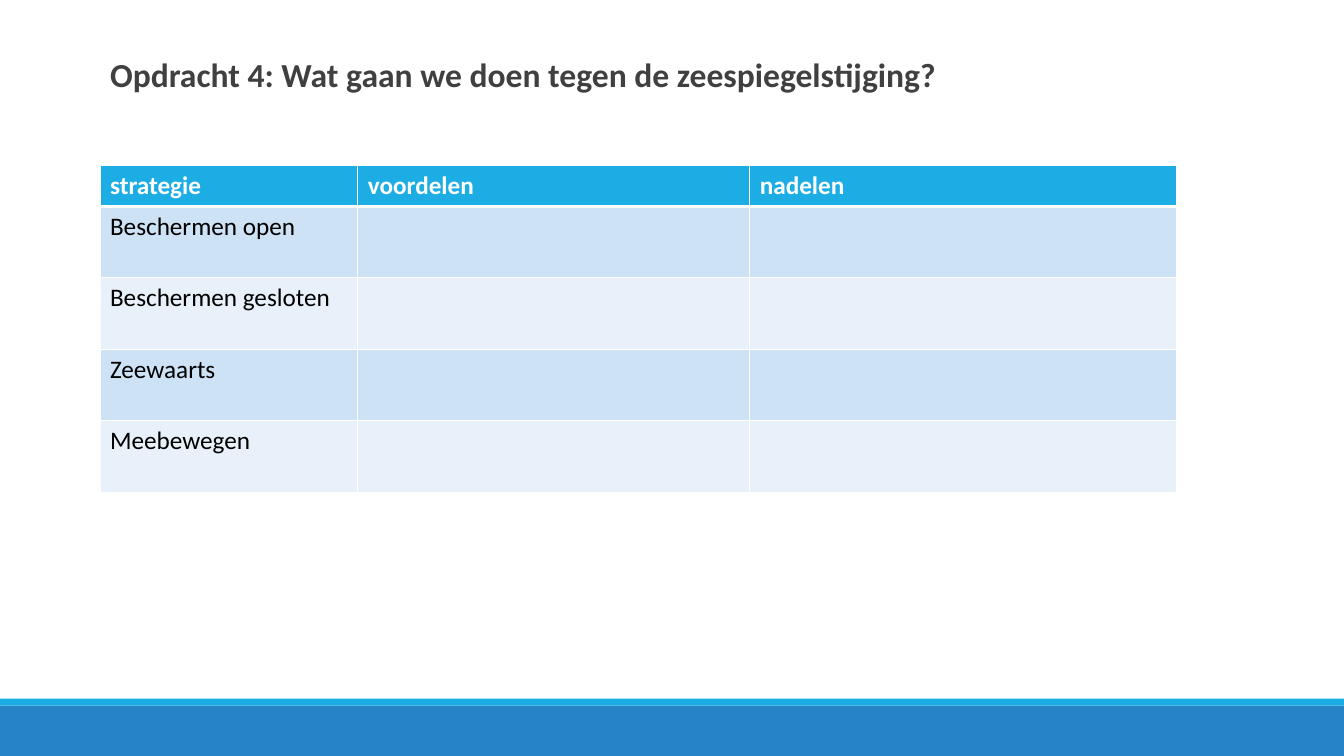
from dataclasses import dataclass

from pptx import Presentation
from pptx.dml.color import RGBColor
from pptx.enum.shapes import MSO_SHAPE as Preset
from pptx.enum.text import MSO_ANCHOR as Anchor, MSO_AUTO_SIZE as AutoSize, PP_ALIGN as Align
from pptx.oxml.ns import qn
from pptx.oxml.xmlchemy import OxmlElement as make_element
from pptx.util import Pt

FONT = "Calibri"
WHITE, BLACK, GREY = "FFFFFF", "000000", "404040"
BLUE, CYAN = "2683C6", "1CADE4"
ROW_FILLS = ("E8F1FA", "CDE3F5")

PAGE_WIDTH, PAGE_HEIGHT = 960, 540
LEFT = 71.4
TABLE_TOP = 118.2
COLUMN_WIDTHS = (184.2, 280, 305)
HEADER_HEIGHT, ROW_HEIGHT = 29.2, 51.1

HEADINGS = ("strategie", "voordelen", "nadelen")
STRATEGIES = ("Beschermen open", "Beschermen gesloten", "Zeewaarts", "Meebewegen")


@dataclass(frozen=True)
class Bar:
    top: float
    height: float
    color: str


BARS = (Bar(504, 36, BLUE), Bar(499, 5, CYAN))


def paint(target, color: str) -> None:
    target.solid()
    target.fore_color.rgb = RGBColor.from_string(color)


def write(frame, text: str, *, size: float, color: str, bold: bool = False):
    para = frame.paragraphs[0]
    para.alignment = Align.LEFT
    span = para.add_run()
    span.text = text
    span.font.name = FONT
    span.font.size = Pt(size)
    span.font.bold = bold
    paint(span.font.fill, color)
    return para


def add_bar(page, bar: Bar) -> None:
    shape = page.shapes.add_shape(Preset.RECTANGLE, 0, Pt(bar.top), Pt(PAGE_WIDTH), Pt(bar.height))
    shape.shadow.inherit = False
    paint(shape.fill, bar.color)
    shape.line.fill.background()


def fill_heading(box) -> None:
    box.left, box.top, box.width, box.height = Pt(LEFT), Pt(38.2), Pt(789), Pt(436.3)
    frame = box.text_frame
    frame.auto_size = AutoSize.NONE
    frame.word_wrap = True
    frame.vertical_anchor = Anchor.TOP
    frame.margin_left = frame.margin_right = 0
    frame.margin_top = frame.margin_bottom = Pt(3.6)
    para = write(frame, "Opdracht 4: Wat gaan we doen tegen de zeespiegelstijging?",
                 size=24, color=GREY, bold=True)
    para.line_spacing = 0.9
    para.space_before, para.space_after = Pt(12), Pt(2)
    properties = para._p.get_or_add_pPr()
    properties.set("marL", str(Pt(7.2)))
    properties.set("indent", "0")
    properties.append(make_element("a:buNone"))


def add_borders(cell, *, top: float, bottom: float) -> None:
    properties = cell._tc.get_or_add_tcPr()
    widths = {"a:lnL": 1, "a:lnR": 1, "a:lnT": top, "a:lnB": bottom}
    for position, (tag, width) in enumerate(widths.items()):
        line = make_element(tag)
        line.set("w", str(Pt(width)))
        solid = make_element("a:solidFill")
        color = make_element("a:srgbClr")
        color.set("val", WHITE)
        solid.append(color)
        line.append(solid)
        properties.insert(position, line)


def add_strategy_table(page) -> None:
    rows = [HEADINGS] + [(strategy, "", "") for strategy in STRATEGIES]
    heights = [HEADER_HEIGHT] + [ROW_HEIGHT] * len(STRATEGIES)
    table = page.shapes.add_table(len(rows), len(HEADINGS), Pt(LEFT), Pt(TABLE_TOP),
                                  Pt(sum(COLUMN_WIDTHS)), Pt(sum(heights))).table
    for column, width in zip(table.columns, COLUMN_WIDTHS):
        column.width = Pt(width)
    for index, (texts, height) in enumerate(zip(rows, heights)):
        header = index == 0
        table.rows[index].height = Pt(height)
        for cell, text in zip(table.rows[index].cells, texts):
            paint(cell.fill, CYAN if header else ROW_FILLS[index % 2])
            add_borders(cell, top=3 if index == 1 else 1, bottom=3 if header else 1)
            if text:
                write(cell.text_frame, text, size=18,
                      color=WHITE if header else BLACK, bold=header)


def main() -> None:
    deck = Presentation()
    deck.slide_width, deck.slide_height = Pt(PAGE_WIDTH), Pt(PAGE_HEIGHT)
    page = deck.slides.add_slide(deck.slide_layouts.get_by_name("Title and Content"))
    title = page.shapes.title
    title.element.getparent().remove(title.element)
    for bar in BARS:
        add_bar(page, bar)
    fill_heading(page.placeholders[1])
    add_strategy_table(page)
    deck.save("out.pptx")


if __name__ == "__main__":
    main()
